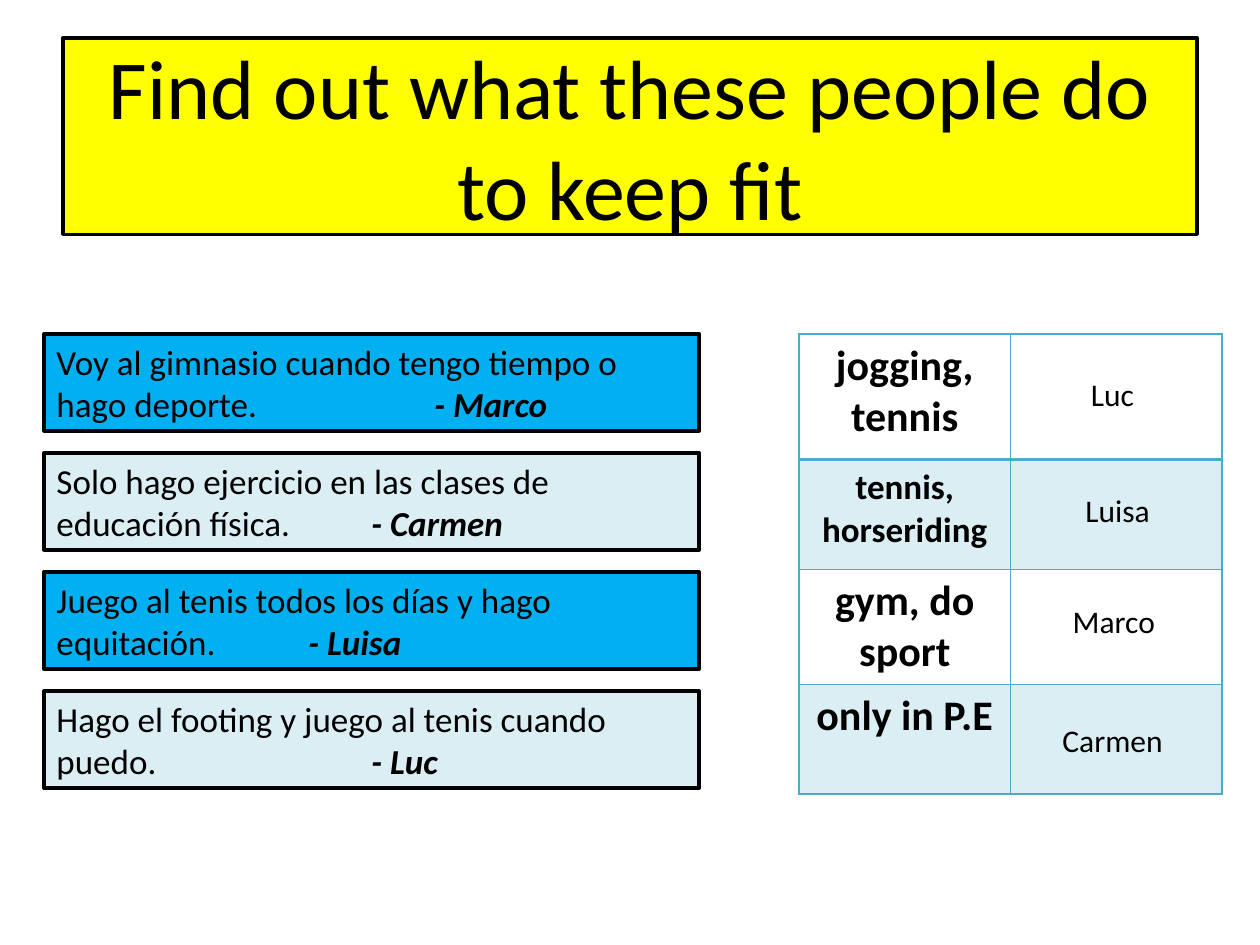
from lxml import etree
from pptx import Presentation
from pptx.dml.color import RGBColor
from pptx.enum import shapes, text
from pptx.oxml import ns
from pptx.util import Inches, Pt

BLACK = RGBColor(0x00, 0x00, 0x00)
YELLOW = RGBColor(0xFF, 0xFF, 0x00)
BLUE = RGBColor(0x00, 0xB0, 0xF0)
PALE = RGBColor(0xDB, 0xEE, 0xF4)
TEAL = RGBColor(0x4B, 0xAC, 0xC6)

TITLE = "Find out what these people do to keep fit"
QUOTES = [
    ("Voy al gimnasio cuando tengo tiempo o hago deporte.\t\t\t", "- Marco"),
    ("Solo hago ejercicio en las clases de educación física. \t\t", "- Carmen"),
    ("Juego al tenis todos los días y hago equitación.\t\t", "- Luisa"),
    ("Hago el footing y juego al tenis cuando puedo.\t\t\t\t", "- Luc"),
]
ACTIVITIES = [
    ("jogging, tennis", 24, 1),
    ("tennis, horseriding", 20, 0.87),
    ("gym, do sport", 24, 0.87),
    ("only in P.E", 24, 0.87),
]
ANSWERS = [("Luc", 8.16, 2.93), ("Luisa", 8.2, 3.85), ("Marco", 8.17, 4.73), ("Carmen", 8.16, 5.67)]
TOP, QUOTE_STEP = 2.65, 0.945
COLUMN_WIDTH = 1.68


def add_span(para, words, size, bold=False, italic=False):
    span = para.add_run()
    span.text = words
    span.font.name = "Calibri"
    span.font.size = Pt(size)
    span.font.bold = bold
    span.font.italic = italic
    span.font.color.rgb = BLACK


def add_box(page, kind, left, top, width, height, fill, align, anchor):
    box = page.shapes.add_shape(kind, Inches(left), Inches(top), Inches(width), Inches(height))
    box.shadow.inherit = False
    box.fill.solid()
    box.fill.fore_color.rgb = fill
    box.line.color.rgb = BLACK
    box.line.width = Pt(2)
    box.text_frame.word_wrap = True
    box.text_frame.vertical_anchor = anchor
    box.text_frame.paragraphs[0].alignment = align
    return box


def set_border(cell, side, points):
    line = etree.SubElement(cell._tc.get_or_add_tcPr(), ns.qn(f"a:{side}"), w=str(Pt(points)))
    fill = etree.SubElement(line, ns.qn("a:solidFill"))
    etree.SubElement(fill, ns.qn("a:srgbClr"), val=str(TEAL))


def add_activities(page):
    height = sum(row[2] for row in ACTIVITIES)
    frame = page.shapes.add_table(len(ACTIVITIES), 2, Inches(6.34), Inches(TOP),
                                  Inches(2 * COLUMN_WIDTH), Inches(height))
    table = frame.table
    table.first_row = table.horz_banding = False
    for column in table.columns:
        column.width = Inches(COLUMN_WIDTH)
    for index, (activity, size, row_height) in enumerate(ACTIVITIES):
        table.rows[index].height = Inches(row_height)
        for cell in table.rows[index].cells:
            for side in ("lnL", "lnR", "lnT", "lnB"):
                heavy = (index, side) in ((0, "lnB"), (1, "lnT"))
                set_border(cell, side, 2 if heavy else 1)
            if index % 2:
                cell.fill.solid()
                cell.fill.fore_color.rgb = PALE
            else:
                cell.fill.background()
        para = table.cell(index, 0).text_frame.paragraphs[0]
        para.alignment = text.PP_ALIGN.CENTER
        add_span(para, activity, size, bold=True)


def main():
    deck = Presentation()
    deck.slide_width, deck.slide_height = Inches(10), Inches(7.5)
    page = deck.slides.add_slide(deck.slide_layouts[6])

    title = add_box(page, shapes.MSO_SHAPE.ROUNDED_RECTANGLE, 0.5, 0.3, 9, 1.56, YELLOW,
                    text.PP_ALIGN.CENTER, text.MSO_ANCHOR.MIDDLE)
    title.adjustments[0] = 0
    add_span(title.text_frame.paragraphs[0], TITLE, 48)

    add_activities(page)

    for index, (quote, speaker) in enumerate(QUOTES):
        box = add_box(page, shapes.MSO_SHAPE.RECTANGLE, 0.35, TOP + index * QUOTE_STEP, 5.2, 0.77,
                      PALE if index % 2 else BLUE, text.PP_ALIGN.LEFT, text.MSO_ANCHOR.TOP)
        para = box.text_frame.paragraphs[0]
        add_span(para, quote, 20)
        add_span(para, speaker, 20, bold=True, italic=True)

    for name, left, top in ANSWERS:
        box = page.shapes.add_textbox(Inches(left), Inches(top), Inches(1.34), Inches(0.4))
        box.text_frame.word_wrap = True
        para = box.text_frame.paragraphs[0]
        para.alignment = text.PP_ALIGN.CENTER
        add_span(para, name, 18)

    deck.save("out.pptx")


if __name__ == "__main__":
    main()
